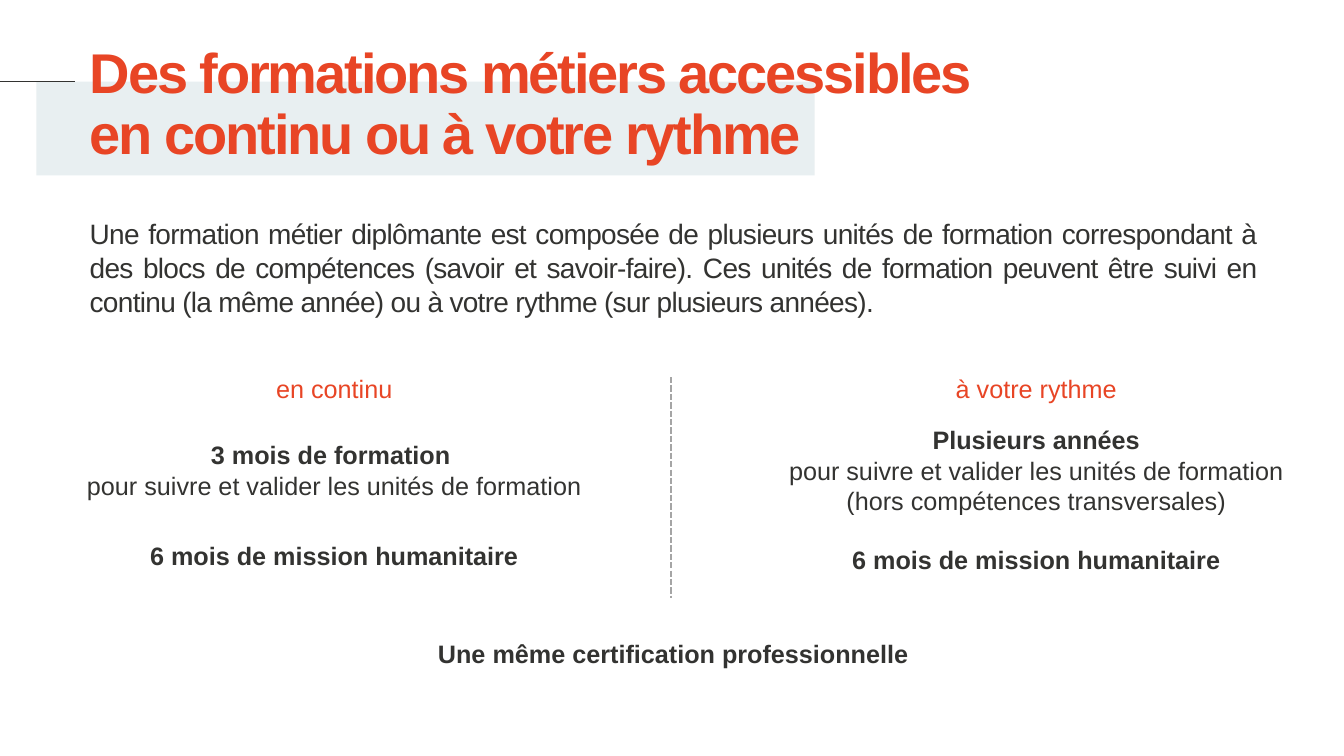
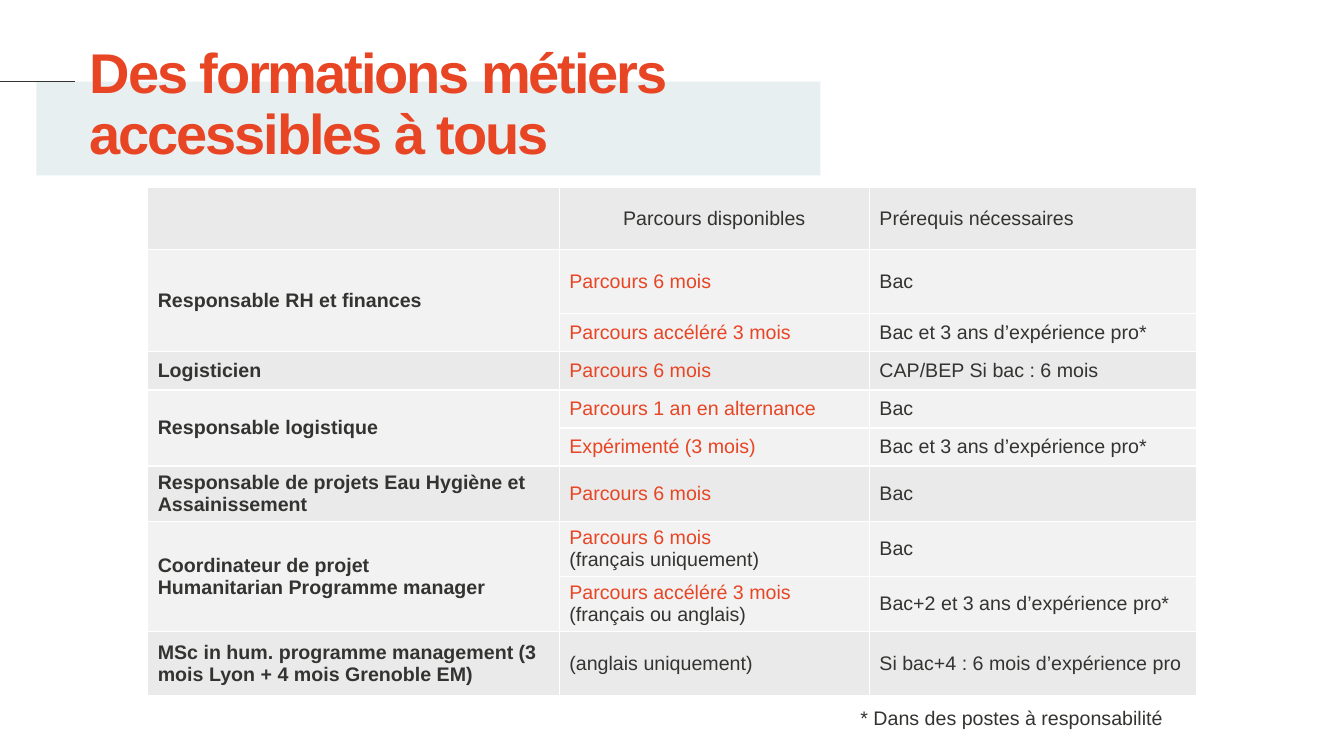
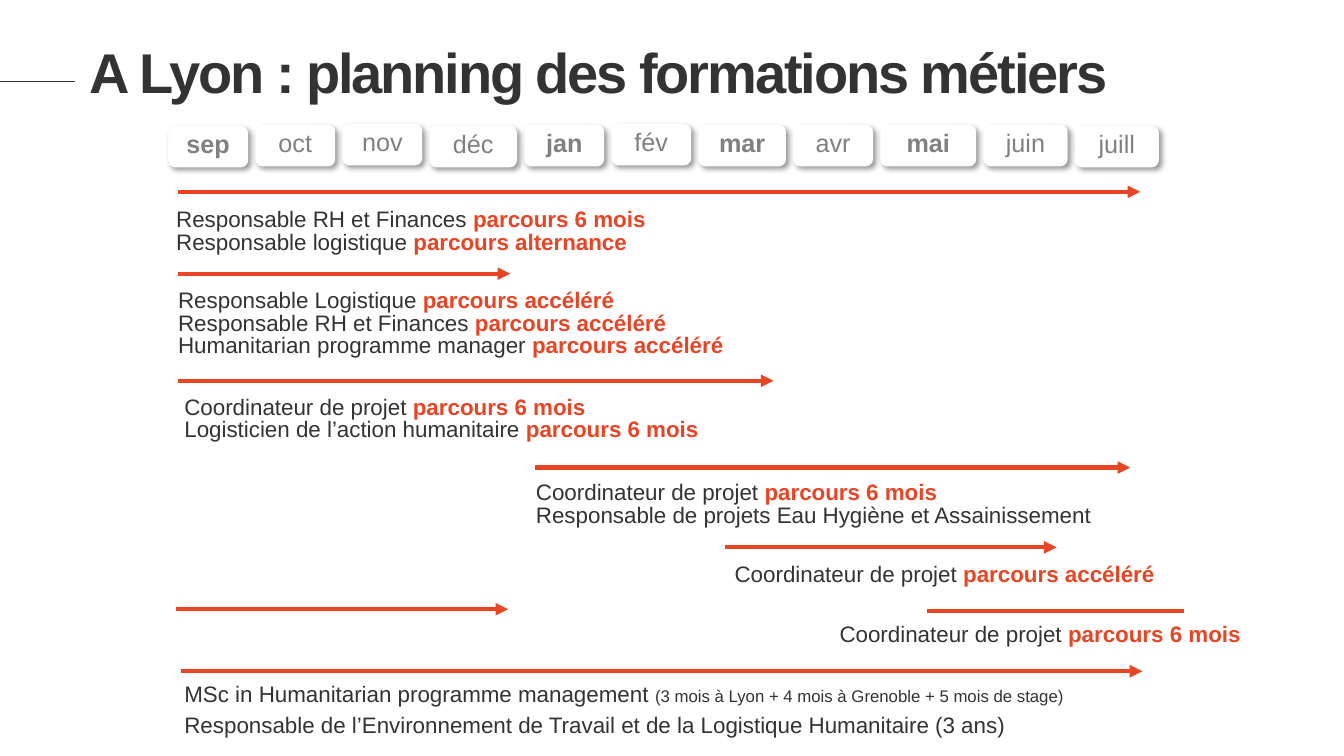
from copy import deepcopy

from lxml.etree import SubElement
from pptx import Presentation
from pptx.dml.color import RGBColor
from pptx.enum.dml import MSO_LINE as Dash
from pptx.enum.shapes import MSO_CONNECTOR as Conn, MSO_SHAPE as Form
from pptx.enum.text import MSO_ANCHOR as Anchor, MSO_AUTO_SIZE as Fit, PP_ALIGN as Align
from pptx.oxml.ns import qn
from pptx.util import Pt

RED = RGBColor(0xE8, 0x45, 0x25)
INK = RGBColor(0x33, 0x33, 0x31)
MIST = RGBColor(0xE8, 0xEF, 0xF1)
GRAY = RGBColor(0x80, 0x80, 0x80)
DASHED = RGBColor(0xA5, 0xA5, 0xA5)
WHITE = RGBColor(0xFF, 0xFF, 0xFF)
DARK_ROW = RGBColor(0xEA, 0xEA, 0xEA)
PALE_ROW = RGBColor(0xF2, 0xF2, 0xF2)

BASE = dict(name="Arial", size=Pt(18), bold=False, color=INK)
BOLD = dict(bold=True)
WARM = dict(color=RED)
HOT = dict(color=RED, bold=True)


# Shared parts
def style(run, fmt, track):
    for key, val in {**BASE, **fmt}.items():
        if key == "color":
            run.font.color.rgb = val
        else:
            setattr(run.font, key, val)
    if track:
        run._r.get_or_add_rPr().set("spc", str(int(track * 100)))


def write(frame, paras, fmt={}, align=Align.LEFT, lead=None, track=0):
    """Each paragraph is a list of runs: a string, or (string, format)."""
    for i, runs in enumerate(paras):
        para = frame.paragraphs[0] if i == 0 else frame.add_paragraph()
        para.alignment = align
        if lead:
            para.line_spacing = lead
        for item in runs:
            text, own = (item, {}) if isinstance(item, str) else item
            for j, part in enumerate(text.split("\n")):
                if j:
                    para.add_line_break()
                    para._p[-1].append(deepcopy(run._r.rPr))
                if part:
                    run = para.add_run()
                    run.text = part
                    style(run, {**fmt, **own}, track)


def label(slide, box, paras, fit=Fit.NONE, **look):
    frame = slide.shapes.add_textbox(*map(Pt, box)).text_frame
    frame.word_wrap = True
    frame.auto_size = fit
    write(frame, paras, **look)


def block(slide, box, paras=(), form=Form.RECTANGLE, fill=WHITE, **look):
    shape = slide.shapes.add_shape(form, *map(Pt, box))
    shape.shadow.inherit = False
    shape.fill.solid()
    shape.fill.fore_color.rgb = fill
    shape.line.fill.background()
    shape.text_frame.word_wrap = True
    shape.text_frame.vertical_anchor = Anchor.MIDDLE
    write(shape.text_frame, paras, **look)
    return shape


def stroke(slide, ends, color, width, dash=None, head=False):
    line = slide.shapes.add_connector(Conn.STRAIGHT, *map(Pt, ends))
    line.line.color.rgb = color
    line.line.width = Pt(width)
    if dash:
        line.line.dash_style = dash
    if head:
        SubElement(line.line._get_or_add_ln(), qn("a:tailEnd"), type="triangle")
    SubElement(line._element.spPr, qn("a:effectLst"))


def start(deck, text, width, height, color, band=0):
    """Add a slide with its rule, title and optional band."""
    slide = deck.slides.add_slide(deck.slide_layouts[5])
    if band:
        block(slide, (26, 58.3, band, 67), fill=MIST)
    stroke(slide, (0, 58.3, 53.3, 58.3), INK, 0.5)
    title = slide.shapes.title
    title.left, title.top, title.width, title.height = map(Pt, (57, 28.8, width, height))
    frame = title.text_frame
    frame.word_wrap = True
    frame.auto_size = Fit.NONE
    frame.vertical_anchor = Anchor.TOP
    write(frame, [[text]], dict(size=Pt(40), bold=True, color=color), lead=0.9, track=-1.5)
    slide.shapes._spTree.append(title._element)
    return slide


# Slide 1: two paces
def column(slide, mid, top, head, parts):
    """Stack a heading and blocks about a middle axis."""
    text, wide, high = head
    label(slide, (mid - wide / 2, top, wide, high), [[text]], fmt=WARM,
          align=Align.CENTER, lead=0.9)
    for down, wide, high, runs in parts:
        block(slide, (mid - wide / 2, top + down, wide, high), [runs], align=Align.CENTER)


def paces(deck):
    slide = start(deck, "Des formations métiers accessibles \nen continu ou à votre rythme",
                  751.7, 104.4, RED, band=556)
    block(slide, (57, 159, 847.5, 64), [[
        "Une formation métier diplômante est composée de plusieurs unités de formation "
        "correspondant à des blocs de compétences (savoir et savoir-faire). Ces unités de "
        "formation peuvent être suivi en continu (la même année) ou à votre rythme "
        "(sur plusieurs années)."]], fmt=dict(size=Pt(20)), align=Align.JUSTIFY, track=-0.5)
    units = "pour suivre et valider les unités de formation"
    work = [("6 mois de mission humanitaire", BOLD)]
    column(slide, 238.7, 265.7, ("en continu", 101, 31), [
        (38, 368.6, 64, [("3 mois de formation \n", BOLD), units]),
        (113, 387.4, 36.7, work)])
    column(slide, 740.2, 265.7, ("à votre rythme", 139.7, 36.7), [
        (38, 384.5, 64, [("Plusieurs années\n", BOLD), units + " (hors compétences transversales)"]),
        (102.2, 279.4, 64, work)])
    stroke(slide, (479.5, 269.3, 479.5, 427), DASHED, 1.5, dash=Dash.SQUARE_DOT)
    block(slide, (296.6, 435, 368.6, 64), [["Une même certification professionnelle"]],
          fmt=BOLD, align=Align.CENTER)


# Slide 2: table of courses
SIX, FAST = "Parcours 6 mois", "Parcours accéléré 3 mois"
BAC, SENIOR = "Bac", "Bac et 3 ans d’expérience pro*"
JOBS = [  # job, then (course, note, entry level, row height)
    ("Responsable RH et finances", [(SIX, "", BAC, 46), (FAST, "", SENIOR, 27.2)]),
    ("Logisticien", [(SIX, "", "CAP/BEP Si bac : 6 mois", 27.2)]),
    ("Responsable logistique", [("Parcours 1 an en alternance", "", BAC, 27.2),
                                ("Expérimenté (3 mois)", "", SENIOR, 27.2)]),
    ("Responsable de projets Eau Hygiène et Assainissement", [(SIX, "", BAC, 39.4)]),
    ("Coordinateur de projet\nHumanitarian Programme manager", [
        (SIX, "(français uniquement)", BAC, 39.4),
        (FAST, "(français ou anglais)", "Bac+2 et 3 ans d’expérience pro*", 39.4)]),
    ("MSc in hum. programme management (3 mois Lyon + 4 mois Grenoble EM)", [
        ("", "(anglais uniquement)", "Si bac+4 : 6 mois d’expérience pro", 45.6)]),
]


def paint(cell, fill, paras, **look):
    cell.fill.solid()
    cell.fill.fore_color.rgb = fill
    cell.vertical_anchor = Anchor.MIDDLE
    write(cell.text_frame, paras, **look)
    props = cell._tc.get_or_add_tcPr()
    for i, side in enumerate(("lnL", "lnR", "lnT", "lnB")):
        edge = props.makeelement(qn("a:" + side), {"w": str(Pt(1))})
        props.insert(i, edge)
        SubElement(SubElement(edge, qn("a:solidFill")), qn("a:srgbClr"), val=str(WHITE))


def grid(slide, left, top, widths, header):
    rows = [(job, line, i) for i, (job, lines) in enumerate(JOBS) for line in lines]
    highs = [44.2] + [line[3] for _, line, _ in rows]
    table = slide.shapes.add_table(len(highs), 3, Pt(left), Pt(top),
                                   Pt(sum(widths)), Pt(sum(highs))).table
    table.first_row = table.horz_banding = False
    for col, wide in zip(table.columns, widths):
        col.width = Pt(wide)
    for row, high in zip(table.rows, highs):
        row.height = Pt(high)
    small = dict(size=Pt(14))
    for c, text in enumerate(header):
        paint(table.cell(0, c), DARK_ROW, [[text]], fmt=small,
              align=Align.CENTER if c == 1 else Align.LEFT)
    last = None
    for r, (job, (course, note, entry, _), i) in enumerate(rows, 1):
        fill = DARK_ROW if i % 2 else PALE_ROW
        fresh = job != last
        paint(table.cell(r, 0), fill, [[(job, BOLD)]] if fresh else [], fmt=small)
        paint(table.cell(r, 1), fill,
              [[run] for run in ((course, WARM), (note, {})) if run[0]], fmt=small)
        paint(table.cell(r, 2), fill, [[entry]], fmt=small)
        if not fresh:
            table.cell(r - 1, 0).merge(table.cell(r, 0))
        last = job


def access(deck):
    slide = start(deck, "Des formations métiers accessibles à tous", 596, 104.4, RED, band=560)
    grid(slide, 105.5, 134, (294, 221.5, 233.5),
         ("", "Parcours disponibles", "Prérequis nécessaires"))
    label(slide, (607.5, 501, 312, 24.5), [["* Dans des postes à responsabilité"]],
          fit=Fit.SHAPE_TO_FIT_TEXT, fmt=dict(size=Pt(14)))


# Slide 3: calendar
MONTHS = [  # name, width, step down, bold
    ("sep", 57, 1.4, True), ("oct", 57, 0.7, False), ("nov", 57, 0, False),
    ("déc", 62.5, 1.4, False), ("jan", 57, 0.7, True), ("fév", 57, 0, False),
    ("mar", 62.5, 0.7, True), ("avr", 57, 0.7, False), ("mai", 68.5, 0.7, True),
    ("juin", 60, 0.7, False), ("juill", 60, 1.4, False),
]
LEAD = "Coordinateur de projet "
HALF, QUICK = ("parcours 6 mois", HOT), ("parcours accéléré", HOT)
TRACKS = [  # x, y, length, arrowhead, text (dx, dy, width, height), paragraphs
    (127.5, 137, 687, True, (-8.7, 9.2, 424, 39.6), [
        ["Responsable RH et Finances ", HALF],
        ["Responsable logistique ", ("parcours alternance", HOT)]]),
    (127.5, 195.5, 237, True, (-7.3, 8.3, 490, 55.4), [
        ["Responsable Logistique ", QUICK],
        ["Responsable RH et Finances ", QUICK],
        ["Humanitarian programme manager ", QUICK]]),
    (127.5, 272, 425, True, (-2.9, 8, 407, 39.6), [
        [LEAD, HALF], ["Logisticien de l’action humanitaire ", HALF]]),
    (382.3, 334, 425, True, (-6.5, 7.3, 452, 39.6), [
        [LEAD, HALF], ["Responsable de projets Eau Hygiène et Assainissement"]]),
    (517.7, 391, 237, True, (0, 8.6, 377, 23.8), [[LEAD, QUICK]]),
    (126, 435.2, 237, True, None, []),
    (662.4, 436.3, 183.6, False, (-69.8, 5.8, 343.5, 23.8), [[LEAD, HALF]]),
    (129, 479.5, 687, True, (-4.4, 0, 691, 49.7), [
        ["MSc in Humanitarian programme management ",
         ("(3 mois à Lyon + 4 mois à Grenoble + 5 mois de stage)", dict(size=Pt(12)))],
        ["Responsable de l’Environnement de Travail et de la Logistique Humanitaire (3 ans)"]]),
]


def months(slide, left, top, gap):
    for name, wide, down, bold in MONTHS:
        tab = block(slide, (left, top + down, wide, 29.5), [[name]],
                    form=Form.ROUNDED_RECTANGLE, fmt=dict(color=GRAY, bold=bold),
                    align=Align.CENTER, lead=0.8)
        glow = SubElement(tab._element.spPr.find(qn("a:effectLst")), qn("a:outerShdw"),
                          blurRad=str(Pt(4)), dist=str(Pt(3)), dir=str(45 * 60000),
                          algn="tl", rotWithShape="0")
        black = SubElement(glow, qn("a:srgbClr"), val="000000")
        SubElement(black, qn("a:alpha"), val="40000")
        left += wide + gap


def track(slide, x, y, span, head, box, paras, lead):
    stroke(slide, (x, y, x + span, y), RED, 3, head=head)
    if box:
        dx, dy, wide, high = box
        label(slide, (x + dx, y + dy, wide, high), paras, fit=Fit.SHAPE_TO_FIT_TEXT,
              fmt=dict(size=Pt(16)), lead=Pt(lead))


def plan(deck):
    slide = start(deck, "A Lyon : planning des formations métiers", 851, 59, INK)
    months(slide, 120.2, 88.6, 5.2)
    for item in TRACKS:
        track(slide, *item, lead=22 if item is TRACKS[-1] else 16.2)


def main():
    deck = Presentation()
    deck.slide_width, deck.slide_height = Pt(960), Pt(540)
    for build in (paces, access, plan):
        build(deck)
    deck.save("out.pptx")


if __name__ == "__main__":
    main()
